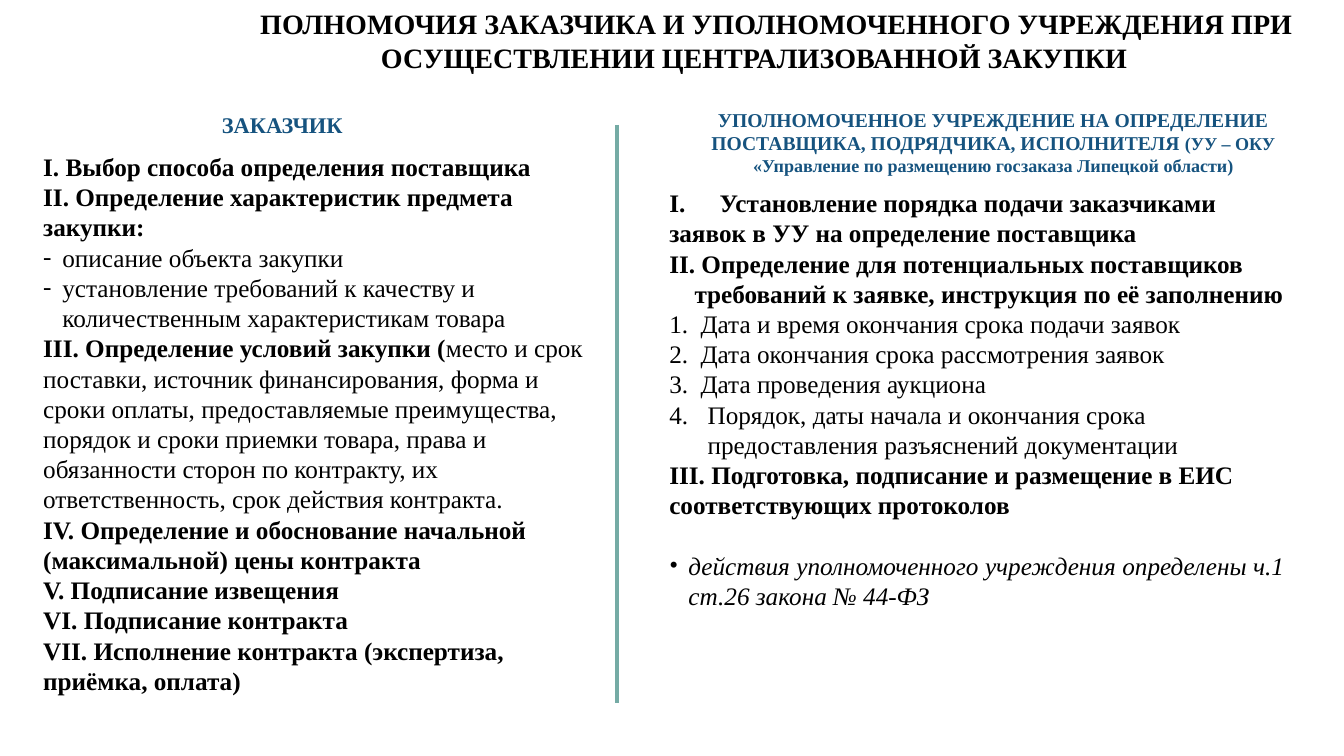
from lxml import etree
from pptx import Presentation
from pptx.dml.color import RGBColor
from pptx.enum.shapes import MSO_CONNECTOR, MSO_SHAPE
from pptx.enum.text import MSO_ANCHOR, PP_ALIGN
from pptx.oxml.ns import qn
from pptx.util import Pt

PX = 9144  # 100 px to the inch
FONT = "Times New Roman"
LEFT, CENTER, JUSTIFY = PP_ALIGN.LEFT, PP_ALIGN.CENTER, PP_ALIGN.JUSTIFY
COLORS = {"text": "000000", "head": "16537F", "rule": "75ABA5", "panel": "FFFFFF"}

deck = Presentation()
deck.slide_width, deck.slide_height = 1333 * PX, 750 * PX
slide = deck.slides.add_slide(deck.slide_layouts[6])


def add_box(left, top, width, height):
    box = slide.shapes.add_textbox(left * PX, top * PX, width * PX, height * PX)
    box.text_frame.word_wrap = True
    return box.text_frame


def add_para(frame, text, size=18, color="text", bold=True, align=LEFT,
             margin=0, indent=0, bullet=None, start=None):
    first = frame.paragraphs[0]
    para = frame.add_paragraph() if first.runs else first
    props = para._p.get_or_add_pPr()
    props.set("marL", str(margin * PX))
    props.set("indent", str(indent * PX))
    if bullet:
        etree.SubElement(props, qn("a:buFont")).set("typeface", FONT)
        etree.SubElement(props, qn("a:buChar")).set("char", bullet)
    elif start:
        number = etree.SubElement(props, qn("a:buAutoNum"))
        number.set("type", "arabicPeriod")
        if start > 1:
            number.set("startAt", str(start))
    para.alignment = align
    para.font.name, para.font.size, para.font.bold = FONT, Pt(size), bold
    para.font.color.rgb = RGBColor.from_string(COLORS[color])
    para.add_run().text = text
    return para


# Customer column: a white panel and the text block on it
white = RGBColor.from_string(COLORS["panel"])
for top, width, weight in ((142, 582, 1), (145, 572, 0.75)):
    panel = slide.shapes.add_shape(MSO_SHAPE.RECTANGLE,
                                   33 * PX, top * PX, width * PX, 555 * PX)
    panel.shadow.inherit = False
    panel.fill.solid()
    panel.fill.fore_color.rgb = white
    panel.line.color.rgb = white
    panel.line.width = Pt(weight)
panel.fill.background()
buyer = panel.text_frame
buyer.word_wrap = True
buyer.vertical_anchor = MSO_ANCHOR.TOP
add_para(buyer, "I. Выбор способа определения поставщика")
add_para(buyer, "II. Определение характеристик предмета закупки:")
for text in ("описание объекта закупки",
             "установление требований к качеству и количественным "
             "характеристикам товара"):
    add_para(buyer, text, bold=False, margin=19, indent=-19, bullet="-")
terms = add_para(buyer, "III. Определение условий закупки (")
rest = terms.add_run()
rest.text = ("место и срок поставки, источник финансирования, форма и сроки оплаты, "
             "предоставляемые преимущества, порядок и сроки приемки товара, права и "
             "обязанности сторон по контракту, их ответственность, срок действия "
             "контракта.")
rest.font.bold = False
for text in ("IV. Определение и обоснование начальной (максимальной) цены контракта",
             "V. Подписание извещения",
             "VI. Подписание контракта",
             "VII. Исполнение контракта (экспертиза, приёмка, оплата)"):
    step = add_para(buyer, text)
    step.runs[0].font._element.set("kern", "0")  # no pair kerning after V

# Column heads
add_para(add_box(190, 105, 180, 37), "ЗАКАЗЧИК", 16, "head", align=CENTER)
head = add_para(add_box(654, 102, 662, 79),
                "УПОЛНОМОЧЕННОЕ УЧРЕЖДЕНИЕ НА ОПРЕДЕЛЕНИЕ ПОСТАВЩИКА, "
                "ПОДРЯДЧИКА, ИСПОЛНИТЕЛЯ ", 14, "head", align=CENTER)
note = head.add_run()
note.text = "(УУ – ОКУ «Управление по размещению госзаказа Липецкой области)"
note.font.size = Pt(12.9)

# Title, its first line set in
title = add_box(163, 2, 1170, 77)
add_para(title, "ПОЛНОМОЧИЯ ЗАКАЗЧИКА И УПОЛНОМОЧЕННОГО УЧРЕЖДЕНИЯ ПРИ "
         "ОСУЩЕСТВЛЕНИИ ЦЕНТРАЛИЗОВАННОЙ ЗАКУПКИ", 20, align=CENTER, indent=44)

# Agency column
agent = add_box(654, 181, 630, 464)
order = add_para(agent, "I.\tУстановление порядка подачи заказчиками заявок в УУ на "
                 "определение поставщика")
tabs = etree.Element(qn("a:tabLst"))
etree.SubElement(tabs, qn("a:tab"), pos=str(28 * PX), algn="l")
order._p.pPr.insert(0, tabs)
add_para(agent, "II. Определение для потенциальных поставщиков требований к заявке, "
         "инструкция по её заполнению", margin=25, indent=-25)
dates = ("Дата и время окончания срока подачи заявок",
         "Дата окончания срока рассмотрения заявок",
         "Дата проведения аукциона")
for text in dates:
    add_para(agent, text, bold=False, margin=31, indent=-31, start=1)
add_para(agent, "Порядок, даты начала и окончания срока предоставления разъяснений "
         "документации", bold=False, margin=38, indent=-38, start=len(dates) + 1)
add_para(agent, "III. Подготовка, подписание и размещение в ЕИС соответствующих "
         "протоколов")
law = add_para(agent, "действия уполномоченного учреждения определены ч.1 ст.26 "
               "закона № 44-ФЗ", bold=False, align=JUSTIFY, margin=19, indent=-19,
               bullet="•")
law.font.italic = True
law.space_before = Pt(21.6)

# Rule between the columns
rule = slide.shapes.add_connector(MSO_CONNECTOR.STRAIGHT,
                                  612 * PX, 124 * PX, 612 * PX, 697 * PX)
rule.line.color.rgb = RGBColor.from_string(COLORS["rule"])
rule.line.width = Pt(2.25)
etree.SubElement(rule._element.spPr, qn("a:effectLst"))

deck.save("out.pptx")
